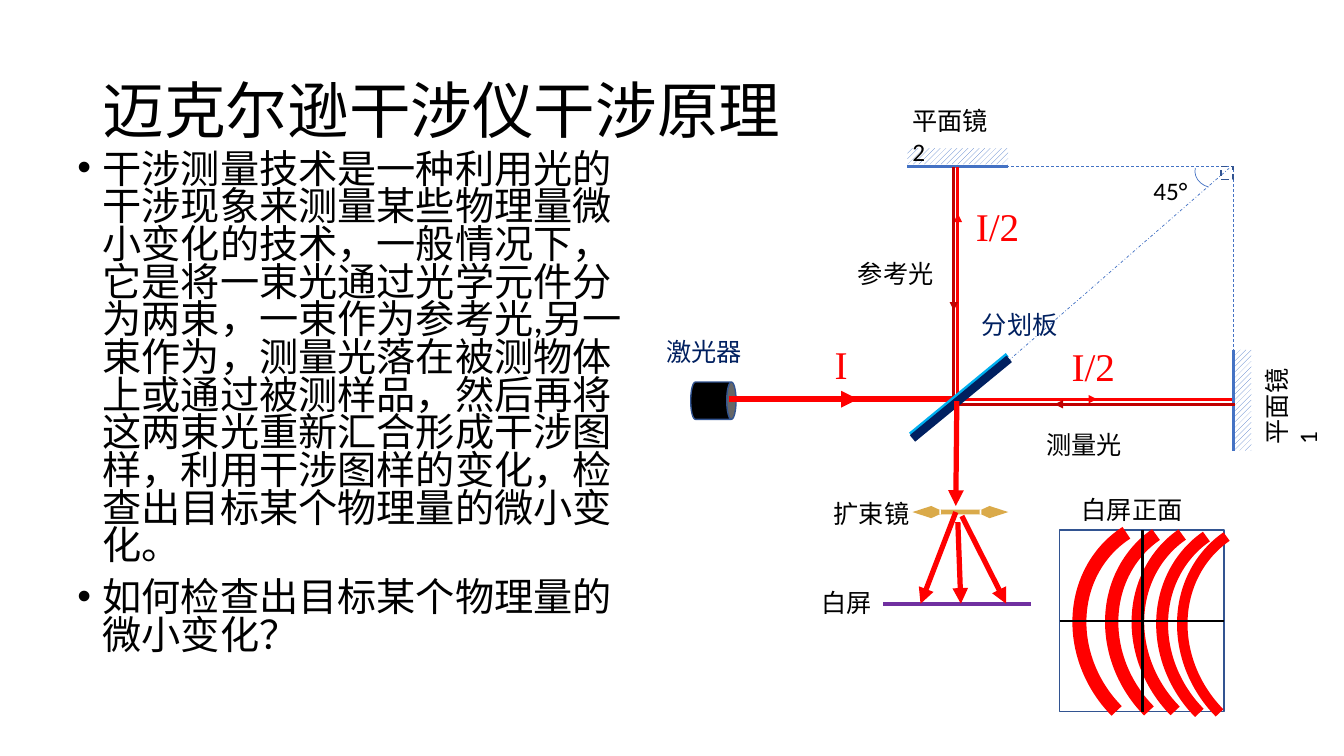
import pptx
import pptx.dml.color
import pptx.enum.dml
import pptx.enum.shapes
import pptx.enum.text
import pptx.oxml
import pptx.oxml.ns
import pptx.util
from pptx.util import Inches

RGBColor = pptx.dml.color.RGBColor
SHAPE = pptx.enum.shapes.MSO_SHAPE
DASH = pptx.enum.dml.MSO_LINE
ANCHOR = pptx.enum.text.MSO_ANCHOR

BLACK = RGBColor(0x00, 0x00, 0x00)
WHITE = RGBColor(0xFF, 0xFF, 0xFF)
RED = RGBColor(0xFF, 0x00, 0x00)
DARK_RED = RGBColor(0xC0, 0x00, 0x00)
BLUE = RGBColor(0x44, 0x72, 0xC4)
OUTLINE_BLUE = RGBColor(0x32, 0x54, 0x91)
NAVY = RGBColor(0x00, 0x20, 0x60)
CYAN = RGBColor(0x00, 0xB0, 0xF0)
PURPLE = RGBColor(0x70, 0x30, 0xA0)
GOLD = RGBColor(0xD6, 0x9F, 0x32)

TITLE = "迈克尔逊干涉仪干涉原理"
BODY = [
    "干涉测量技术是一种利用光的干涉现象来测量某些物理量微小变化的技术，一般情况下，"
    "它是将一束光通过光学元件分为两束，一束作为参考光,另一束作为，测量光落在被测物体上"
    "或通过被测样品，然后再将这两束光重新汇合形成干涉图样，利用干涉图样的变化，"
    "检查出目标某个物理量的微小变化。",
    "如何检查出目标某个物理量的微小变化？",
]


def append_xml(parent, tag, **attributes):
    child = parent.makeelement(pptx.oxml.ns.qn(tag), attributes)
    parent.append(child)
    return child


def add_text(slide, box, paragraphs, size, color=BLACK, font="Calibri", wrap=False,
             anchor=ANCHOR.TOP, line_spacing=None, rotation=0):
    shape = slide.shapes.add_textbox(*map(Inches, box))
    shape.rotation = rotation
    frame = shape.text_frame
    frame.word_wrap = wrap
    frame.vertical_anchor = anchor
    for index, text in enumerate(paragraphs):
        paragraph = frame.add_paragraph() if index else frame.paragraphs[0]
        paragraph.line_spacing = line_spacing
        run = paragraph.add_run()
        run.text = text
        run.font.size = pptx.util.Pt(size)
        run.font.name = font
        run.font.color.rgb = color
    return shape


def add_bullets(shape):
    for paragraph in shape.text_frame.paragraphs:
        paragraph.space_before = pptx.util.Pt(10)
        properties = paragraph._p.get_or_add_pPr()
        properties.set("marL", str(Inches(0.25)))
        properties.set("indent", str(-Inches(0.25)))
        append_xml(properties, "a:buFont", typeface="Arial")
        append_xml(properties, "a:buChar", char="•")


def add_line(slide, start, end, color, width, tail=None, dash=None):
    line = slide.shapes.add_connector(
        pptx.enum.shapes.MSO_CONNECTOR.STRAIGHT, *map(Inches, start + end))
    line.line.color.rgb = color
    line.line.width = pptx.util.Pt(width)
    if dash:
        line.line.dash_style = dash
    if tail:
        append_xml(line.line._get_or_add_ln(), "a:tailEnd", type=tail)
    append_xml(line._element.spPr, "a:effectLst")
    return line


def add_figure(slide, kind, box, fill=None, line=None, width=1, rotation=0, dash=None):
    shape = slide.shapes.add_shape(kind, *map(Inches, box))
    shape.shadow.inherit = False
    shape.rotation = rotation
    if fill is None:
        shape.fill.background()
    else:
        shape.fill.solid()
        shape.fill.fore_color.rgb = fill
    if line is None:
        shape.line.fill.background()
    else:
        shape.line.color.rgb = line
        shape.line.width = pptx.util.Pt(width)
    if dash:
        shape.line.dash_style = dash
    return shape


def add_mirror(slide, hatch_box, start, end, rotation=0):
    hatch = add_figure(slide, SHAPE.RECTANGLE, hatch_box, rotation=rotation)
    hatch.fill.patterned()
    hatch.fill.pattern = pptx.enum.dml.MSO_PATTERN.WIDE_UPWARD_DIAGONAL
    hatch.fill.fore_color.rgb = BLUE
    hatch.fill.back_color.rgb = WHITE
    add_line(slide, start, end, BLUE, 2)


def add_fringe(slide, left, top, width, start_angle):
    """Draw one curved interference band; angles are in units of 0.6 degree * 100000 / 60000."""
    fringe = add_figure(slide, SHAPE.ARC, (left, top, 2.18, 2.39), line=RED,
                        width=width, rotation=320.3)
    fringe.adjustments[0] = start_angle
    fringe.adjustments[1] = 3.48
    fringe._element.spPr.xfrm.set("flipH", "1")


def add_beam_expander(slide):
    lens = add_line(slide, (9.05, 5.08), (10, 5.08), GOLD, 3.5)
    outline = lens.line._get_or_add_ln()
    for tag in ("a:headEnd", "a:tailEnd"):
        append_xml(outline, tag, type="arrow", w="sm", len="lg")
    color = outline.find(".//" + pptx.oxml.ns.qn("a:srgbClr"))
    append_xml(color, "a:alpha", val="88000")


def add_beams(slide):
    beams = [
        ((7.23, 3.96), (9.48, 3.96), (7.86, 3.96), (8.51, 3.96), RED, 4),
        ((9.5, 1.66), (9.5, 3.98), (9.5, 2.97), (9.5, 2.12), RED, 2),
        ((9.5, 3.96), (12.22, 3.96), (10.07, 3.96), (10.88, 3.96), RED, 2),
        ((9.46, 1.66), (9.46, 3.96), (9.46, 2.23), (9.46, 3.08), DARK_RED, 2),
        ((12.25, 4.01), (9.43, 4.01), (11.51, 4.01), (10.46, 4.01), DARK_RED, 2),
    ]
    for start, end, arrow_start, arrow_end, color, width in beams:
        add_line(slide, start, end, color, width)
        add_line(slide, arrow_start, arrow_end, color, width, tail="triangle")


def add_angle_guides(slide):
    corner = (12.23, 1.65)
    add_line(slide, (9.83, 1.65), corner, BLUE, 0.5, dash=DASH.DASH)
    add_line(slide, (12.23, 3.69), corner, BLUE, 0.5, dash=DASH.DASH)
    add_line(slide, (10, 3.58), (12.19, 1.67), BLUE, 0.5, dash=DASH.DASH_DOT)
    add_figure(slide, SHAPE.RECTANGLE, (12.11, 1.65, 0.12, 0.13), line=OUTLINE_BLUE,
               dash=DASH.DASH)
    add_figure(slide, SHAPE.ARC, (11.85, 1.56, 0.35, 0.3), line=BLUE, width=0.5,
               rotation=194.5)


def add_screen_front(slide):
    add_figure(slide, SHAPE.RECTANGLE, (10.51, 5.26, 1.63, 1.8), WHITE, OUTLINE_BLUE)
    for left, top, width, angle in [
        (10.75, 5.08, 10, 158.6), (11.07, 5.08, 9.5, 159.52), (11.33, 5.08, 9, 159.52),
        (11.57, 5.1, 8.5, 159.52), (11.77, 5.1, 7.5, 159.52),
    ]:
        add_fringe(slide, left, top, width, angle)
    add_line(slide, (11.33, 5.26), (11.33, 7.06), BLACK, 1.75)
    add_line(slide, (10.51, 6.16), (12.14, 6.16), BLACK, 1.75)


def add_labels(slide):
    serif = "Times New Roman"
    for text, left, top, width in [("I", 8.18, 3.33, 0.33), ("I/2", 9.58, 1.96, 0.64),
                                   ("I/2", 10.53, 3.35, 0.64)]:
        add_text(slide, (left, top, width, 0.57), [text], 28, RED, serif)
    for text, left, top in [("分划板", 9.64, 3.02), ("激光器", 6.51, 3.29)]:
        add_text(slide, (left, top, 0.96, 0.4), [text], 18, NAVY, serif)
    for text, left, top, width in [
        ("参考光", 8.41, 2.51, 0.96), ("测量光", 10.28, 4.21, 0.96),
        ("白屏", 8.05, 5.78, 0.71), ("45°", 11.34, 1.69, 0.71),
        ("白屏正面", 10.63, 4.85, 1.21), ("扩束镜", 8.17, 4.89, 0.96),
    ]:
        add_text(slide, (left, top, width, 0.4), [text], 18)
    add_text(slide, (8.95, 1, 1.05, 0.4), ["平面镜2"], 18, wrap=True)
    add_text(slide, (12.14, 3.78, 1.05, 0.4), ["平面镜1"], 18, wrap=True, rotation=270)


def main():
    presentation = pptx.Presentation()
    presentation.slide_width = Inches(13.33)
    presentation.slide_height = Inches(7.5)
    slide = presentation.slides.add_slide(presentation.slide_layouts[6])

    add_text(slide, (0.92, 0.4, 7.05, 1.45), [TITLE], 44, font="Cambria", wrap=True,
             anchor=ANCHOR.MIDDLE, line_spacing=0.9)
    add_bullets(add_text(slide, (0.67, 1.47, 5.67, 5.5), BODY, 28, wrap=True,
                         line_spacing=0.8))

    add_figure(slide, SHAPE.CAN, (6.89, 3.75, 0.37, 0.45), BLACK, OUTLINE_BLUE,
               rotation=90)
    add_mirror(slide, (9, 1.47, 1, 0.16), (9, 1.65), (10, 1.65))
    add_mirror(slide, (11.83, 3.89, 1, 0.16), (12.23, 3.47), (12.23, 4.47), rotation=90)
    add_beams(slide)
    add_angle_guides(slide)
    add_screen_front(slide)
    add_labels(slide)

    add_line(slide, (8.76, 5.99), (10.23, 5.99), PURPLE, 2.75)
    add_beam_expander(slide)
    add_line(slide, (9.03, 4.31), (9.99, 3.52), CYAN, 3.25)
    add_line(slide, (10.01, 3.56), (9.05, 4.35), NAVY, 6)
    for start, end in [((9.48, 5.08), (9.13, 5.99)), ((9.54, 5.12), (9.98, 5.99)),
                       ((9.49, 3.98), (9.48, 5.02)), ((9.5, 5.18), (9.53, 5.99))]:
        add_line(slide, start, end, RED, 3.75, tail="triangle")

    presentation.save("out.pptx")


if __name__ == "__main__":
    main()
